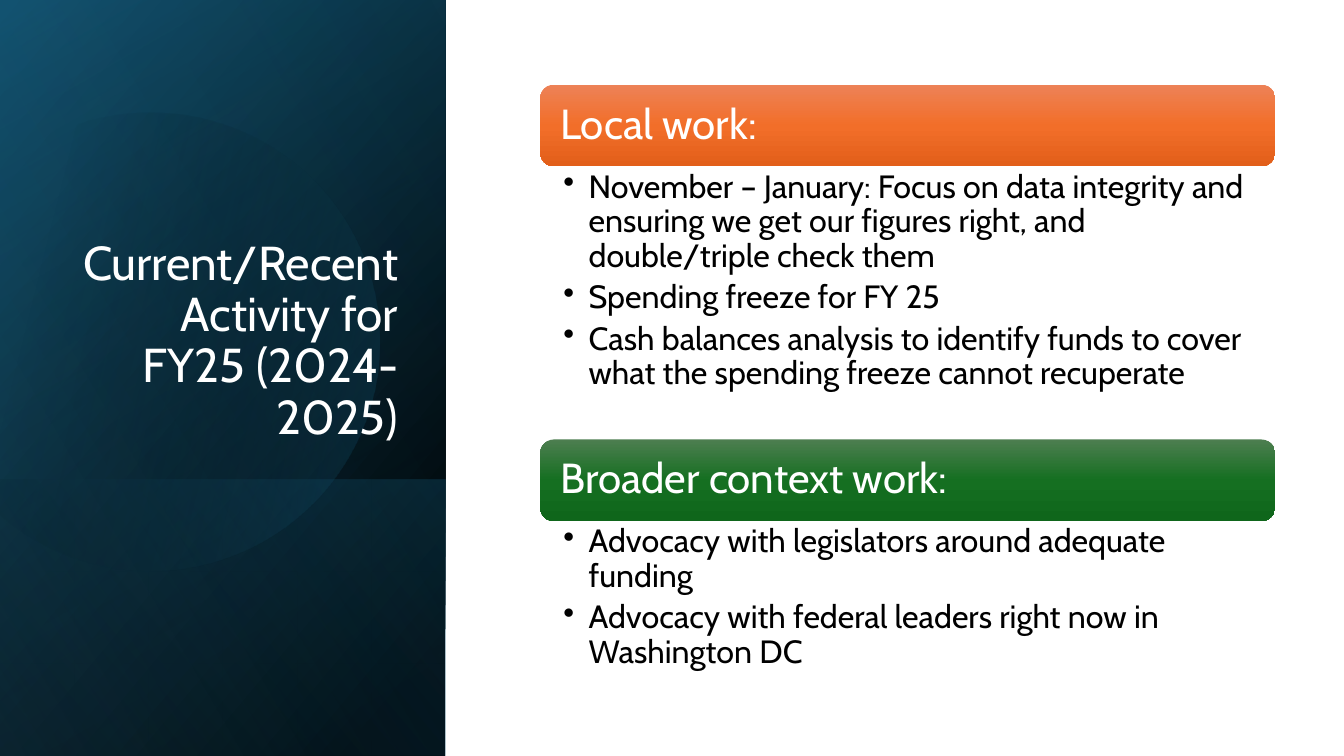
from dataclasses import dataclass
from math import cos, radians, sin

from lxml.etree import SubElement
from pptx import Presentation
from pptx.dml.color import RGBColor
from pptx.enum.shapes import MSO_SHAPE
from pptx.enum.text import MSO_ANCHOR, MSO_AUTO_SIZE, PP_ALIGN
from pptx.oxml.ns import qn
from pptx.util import Pt

RECT, ROUND = MSO_SHAPE.RECTANGLE, MSO_SHAPE.ROUNDED_RECTANGLE
TOP, MIDDLE, BOTTOM = MSO_ANCHOR.TOP, MSO_ANCHOR.MIDDLE, MSO_ANCHOR.BOTTOM
LEFT, RIGHT = PP_ALIGN.LEFT, PP_ALIGN.RIGHT
NO_FIT = MSO_AUTO_SIZE.NONE


@dataclass(frozen=True)
class Theme:
    """Hold the font, type sizes and colours."""
    font: str = "Cabin"
    title: int = 34
    head: int = 30
    body: int = 23
    black: str = "000000"
    white: str = "FFFFFF"
    navy: str = "104862"
    teal: str = "156082"
    sky: str = "46B1E1"
    orange: tuple = ("ED8257", "F26E29", "E25F1A")
    green: tuple = ("4D7E50", "156F21", "0F661B")


THEME = Theme()
SIDE, TALL = 318.24, 540
CARD_X, CARD_W, BAR_H = 385.92, 524.88, 58.32
CARDS = [
    ("Local work:", THEME.orange, 60.48, 195.84, [
        "November – January: Focus on data integrity and ensuring we get our "
        "figures right, and double/triple check them",
        "Spending freeze for FY 25",
        "Cash balances analysis to identify funds to cover what the spending "
        "freeze cannot recuperate",
    ]),
    ("Broader context work:", THEME.green, 313.92, 115.2, [
        "Advocacy with legislators around adequate funding",
        "Advocacy with federal leaders right now in Washington DC",
    ]),
]


def shade(shape, stops, angle):
    """Fill with a gradient of (place, colour, opacity) stops, all in percent."""
    shape.shadow.inherit = False
    shape.line.fill.background()
    shape.fill.gradient()
    shape.fill.gradient_angle = 360 - angle
    ramp = shape._element.spPr.find(qn("a:gradFill")).find(qn("a:gsLst"))
    for old in list(ramp):
        ramp.remove(old)
    for place, color, alpha in stops:
        stop = SubElement(ramp, qn("a:gs"), pos=str(place * 1000))
        tint = SubElement(stop, qn("a:srgbClr"), val=color)
        if alpha < 100:
            SubElement(tint, qn("a:alpha"), val=str(alpha * 1000))


def add_panel(slide, top, height, stops, angle):
    """Add a side panel, turned a quarter and flipped."""
    left, mid = (SIDE - height) / 2, top + height / 2
    panel = slide.shapes.add_shape(
        RECT, Pt(left), Pt(mid - SIDE / 2), Pt(height), Pt(SIDE))
    panel.rotation = 90
    panel._element.spPr.xfrm.set("flipH", "1")
    shade(panel, stops, angle)


def add_disc(slide, x, y, radius, stops, angle):
    """Add a disc cut by a chord on its left."""
    turns = [radians(turn) for turn in range(241, 512, 3)]
    dots = [(Pt(x + radius * cos(turn)), Pt(y + radius * sin(turn)))
            for turn in turns]
    pen = slide.shapes.build_freeform(*dots[0], scale=1.0)
    pen.add_line_segments(dots[1:], close=True)
    disc = pen.convert_to_shape()
    disc.rotation = 343.9
    shade(disc, stops, angle)


def put_text(shape, lines, *, size, color, anchor=TOP, align=LEFT,
             inset=(7.2, 3.6), after=0, bullet=False):
    """Write lines as paragraphs in one format."""
    frame = shape.text_frame
    frame.word_wrap = True
    frame.auto_size = NO_FIT
    frame.vertical_anchor = anchor
    frame.margin_left = frame.margin_right = Pt(inset[0])
    frame.margin_top = frame.margin_bottom = Pt(inset[1])
    for index, line in enumerate(lines):
        para = frame.add_paragraph() if index else frame.paragraphs[0]
        para.alignment = align
        para.line_spacing = 0.9
        para.space_before, para.space_after = Pt(0), Pt(after)
        run = para.add_run()
        run.text = line
        run.font.name, run.font.size = THEME.font, Pt(size)
        run.font.color.rgb = RGBColor.from_string(color)
        if bullet:
            props = para._p.get_or_add_pPr()
            props.set("marL", str(Pt(18)))
            props.set("indent", str(Pt(-18)))
            SubElement(props, qn("a:buChar"), char="•")


def add_card(slide, head, colors, top, height, items):
    """Add a heading bar with a bullet list below."""
    bar = slide.shapes.add_shape(
        ROUND, Pt(CARD_X), Pt(top), Pt(CARD_W), Pt(BAR_H))
    shade(bar, [(i * 50, color, 100) for i, color in enumerate(colors)], 90)
    put_text(bar, [head], size=THEME.head, color=THEME.white,
             anchor=MIDDLE, inset=(11.5, 8.64))
    box = slide.shapes.add_textbox(
        Pt(CARD_X), Pt(top + BAR_H), Pt(CARD_W), Pt(height))
    put_text(box, items, size=THEME.body, color=THEME.black,
             inset=(16.56, 2.88), after=4.6, bullet=True)


def add_side(slide):
    """Layer the dark gradients of the side panel."""
    black, teal = THEME.black, THEME.teal
    add_panel(slide, 0, TALL, [(8, black, 100), (100, THEME.navy, 100)], 50)
    add_panel(slide, 0, TALL, [(0, black, 0), (99, teal, 46)], 30)
    add_panel(slide, 342.72, 197.28, [(2, teal, 29), (100, black, 30)], 130)
    add_disc(slide, 106.9, 241.3, 163.6, [(29, black, 0), (100, teal, 43)], 30)
    add_panel(slide, 0, TALL, [(0, black, 0), (99, THEME.sky, 11)], 120)


def set_title(slide, text):
    """Place the title on top of the side panel."""
    title = slide.shapes.title
    title.left, title.top = Pt(46.08), Pt(132.48)
    title.width, title.height = Pt(245.52), Pt(188.64)
    put_text(title, [text], size=THEME.title, color=THEME.white,
             anchor=BOTTOM, align=RIGHT)
    slide.shapes._spTree.append(title._element)


def main():
    """Build and save the slide."""
    deck = Presentation()
    deck.slide_width, deck.slide_height = Pt(960), Pt(TALL)
    slide = deck.slides.add_slide(deck.slide_layouts[5])
    add_side(slide)
    set_title(slide, "Current/Recent Activity for FY25 (2024-2025)")
    for card in CARDS:
        add_card(slide, *card)
    deck.save("out.pptx")


if __name__ == "__main__":
    main()
